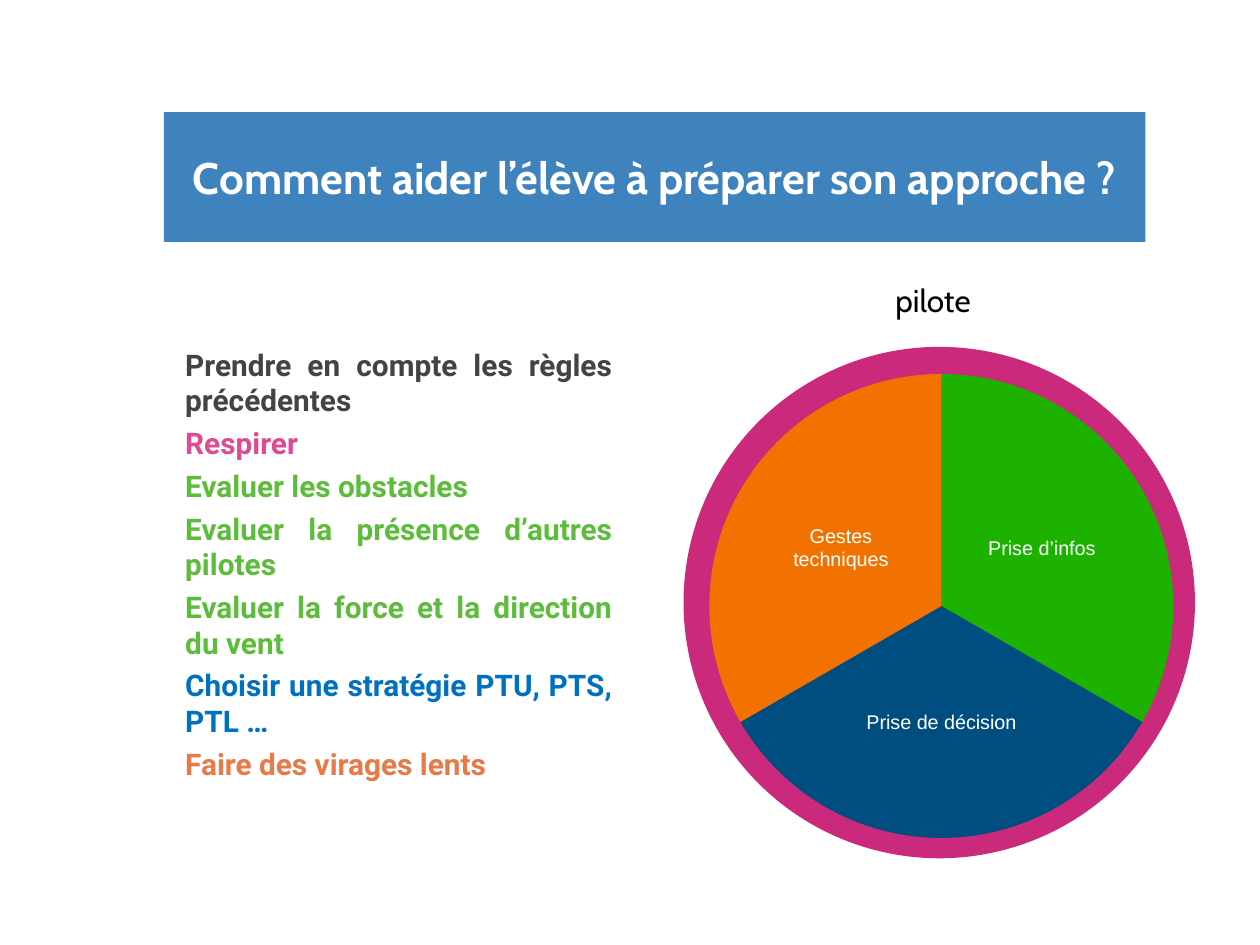
import dataclasses
import typing

import lxml.etree
import pptx
import pptx.chart.chart
import pptx.chart.data
import pptx.dml.color
import pptx.enum.chart
import pptx.enum.text
import pptx.oxml
import pptx.oxml.ns
import pptx.slide
import pptx.util

Inches, Pt = pptx.util.Inches, pptx.util.Pt
Align = pptx.enum.text.PP_ALIGN
Anchor = pptx.enum.text.MSO_ANCHOR
qn = pptx.oxml.ns.qn

PILOT = "pilote"
GREEN = "5DBC3B"
RULES = [
    ("Prendre en compte les règles précédentes", "434343"),
    ("Respirer", "DE4A94"),
    ("Evaluer les obstacles", GREEN),
    ("Evaluer la présence d’autres pilotes", GREEN),
    ("Evaluer la force et la direction du vent", GREEN),
    ("Choisir une stratégie PTU, PTS, PTL …", "0070C0"),
    ("Faire des virages lents", "E97947"),
]


@dataclasses.dataclass
class Slice:
    name: str
    value: float
    color: str


@dataclasses.dataclass
class Pie:
    box: tuple[float, float, float, float]
    plot: tuple[float, float, float, float]
    slices: list[Slice]
    explode: int = 0
    labels: bool = True


PIES = [
    Pie((5.1, 2.7, 4.71, 4.15), (0.005, 0.003, 0.99, 0.988),
        [Slice(PILOT, 100, "CB297B")], explode=1, labels=False),
    Pie((5.63, 2.38, 3.72, 4.87), (0, 0.005, 0.99, 0.988), [
        Slice("Prise d’infos", 33, "1DB100"),
        Slice("Prise de décision", 33, "004D80"),
        Slice("Gestes\ntechniques", 33, "F27200"),
    ]),
]


def rgb(color: str) -> pptx.dml.color.RGBColor:
    return pptx.dml.color.RGBColor.from_string(color)


def place(shape: typing.Any, left: float, top: float, width: float, height: float) -> None:
    shape.left, shape.top = Inches(left), Inches(top)
    shape.width, shape.height = Inches(width), Inches(height)


def write(frame: typing.Any, text: str, *, size: float, font: str, color: str,
          bold: bool = False, align: Align = Align.CENTER, before: float = 0,
          more: bool = False) -> None:
    """Write one paragraph per line; with more, add after the present text."""
    for row, line in enumerate(text.split("\n")):
        para = frame.add_paragraph() if more or row else frame.paragraphs[0]
        para.alignment = align
        para.space_before = Pt(before)
        run = para.add_run()
        run.text = line
        run.font.size, run.font.name, run.font.bold = Pt(size), font, bold
        run.font.color.rgb = rgb(color)


def fit(chart: pptx.chart.chart.Chart, plot: tuple[float, ...]) -> None:
    """Fix the inner plot area and clear the chart background."""
    area = chart._chartSpace.chart.plotArea
    for old in area.findall(qn("c:layout")):
        area.remove(old)
    layout = lxml.etree.Element(qn("c:layout"))
    manual = lxml.etree.SubElement(layout, qn("c:manualLayout"))
    marks = [("layoutTarget", "inner"), ("xMode", "edge"), ("yMode", "edge")]
    for tag, val in marks + list(zip("xywh", plot)):
        lxml.etree.SubElement(manual, qn("c:" + tag)).set("val", str(val))
    area.insert(0, layout)
    look = lxml.etree.Element(qn("c:spPr"))
    lxml.etree.SubElement(look, qn("a:noFill"))
    line = lxml.etree.SubElement(look, qn("a:ln"))
    lxml.etree.SubElement(line, qn("a:noFill"))
    chart._chartSpace.chart.addnext(look)


def draw(slide: pptx.slide.Slide, pie: Pie) -> None:
    data = pptx.chart.data.CategoryChartData()
    data.categories = [part.name.replace("\n", " ") for part in pie.slices]
    data.add_series(PILOT, [part.value for part in pie.slices])
    kind = pptx.enum.chart.XL_CHART_TYPE.PIE
    chart = slide.shapes.add_chart(kind, *map(Inches, pie.box), data).chart
    chart.has_legend = chart.has_title = False
    chart.font.name, chart.font.size = "Cabin", Pt(10)
    chart.font.color.rgb = rgb("000000")
    chart.plots[0].vary_by_categories = False
    fit(chart, pie.plot)
    series = chart.plots[0].series[0]
    if pie.explode:
        burst = lxml.etree.Element(qn("c:explosion"))
        burst.set("val", str(pie.explode))
        series._element.get_or_add_spPr().addnext(burst)
    for index, part in enumerate(pie.slices):
        point = series.points[index]
        point.format.fill.solid()
        point.format.fill.fore_color.rgb = rgb(part.color)
        point.format.line.fill.background()
        if pie.labels:
            label = point.data_label
            write(label.text_frame, part.name, size=11.3, font="Arial", color="FFFFFF")
            label.position = pptx.enum.chart.XL_LABEL_POSITION.CENTER


def main() -> None:
    deck = pptx.Presentation()
    deck.slide_width, deck.slide_height = Inches(10), Inches(7.5)
    slide = deck.slides.add_slide(deck.slide_layouts[0])
    title, body = slide.placeholders

    place(title, 1.3, 0.89, 7.79, 1.03)
    title.fill.solid()
    title.fill.fore_color.rgb = rgb("3F83BE")
    write(title.text_frame, "Comment aider l’élève à préparer son approche ?",
          size=25.2, font="Cabin", color="FFFFFF", bold=True)
    place(body, 1.37, 2.7, 3.59, 3.46)
    for row, (text, color) in enumerate(RULES):
        write(body.text_frame, text, size=17, font="Roboto", color=color, bold=True,
              align=Align.JUSTIFY, before=4 if row else 0, more=row > 0)
    for shape, anchor in ((title, Anchor.MIDDLE), (body, Anchor.TOP)):
        shape.text_frame.word_wrap = True
        shape.text_frame.auto_size = pptx.enum.text.MSO_AUTO_SIZE.NONE
        shape.text_frame.vertical_anchor = anchor

    for pie in PIES:
        draw(slide, pie)

    pilot = slide.shapes.add_textbox(*map(Inches, (5.86, 2.18, 3.09, 0.4)))
    pilot.text_frame.word_wrap = True
    write(pilot.text_frame, PILOT, size=18, font="Cabin", color="000000")
    deck.save("out.pptx")


if __name__ == "__main__":
    main()
